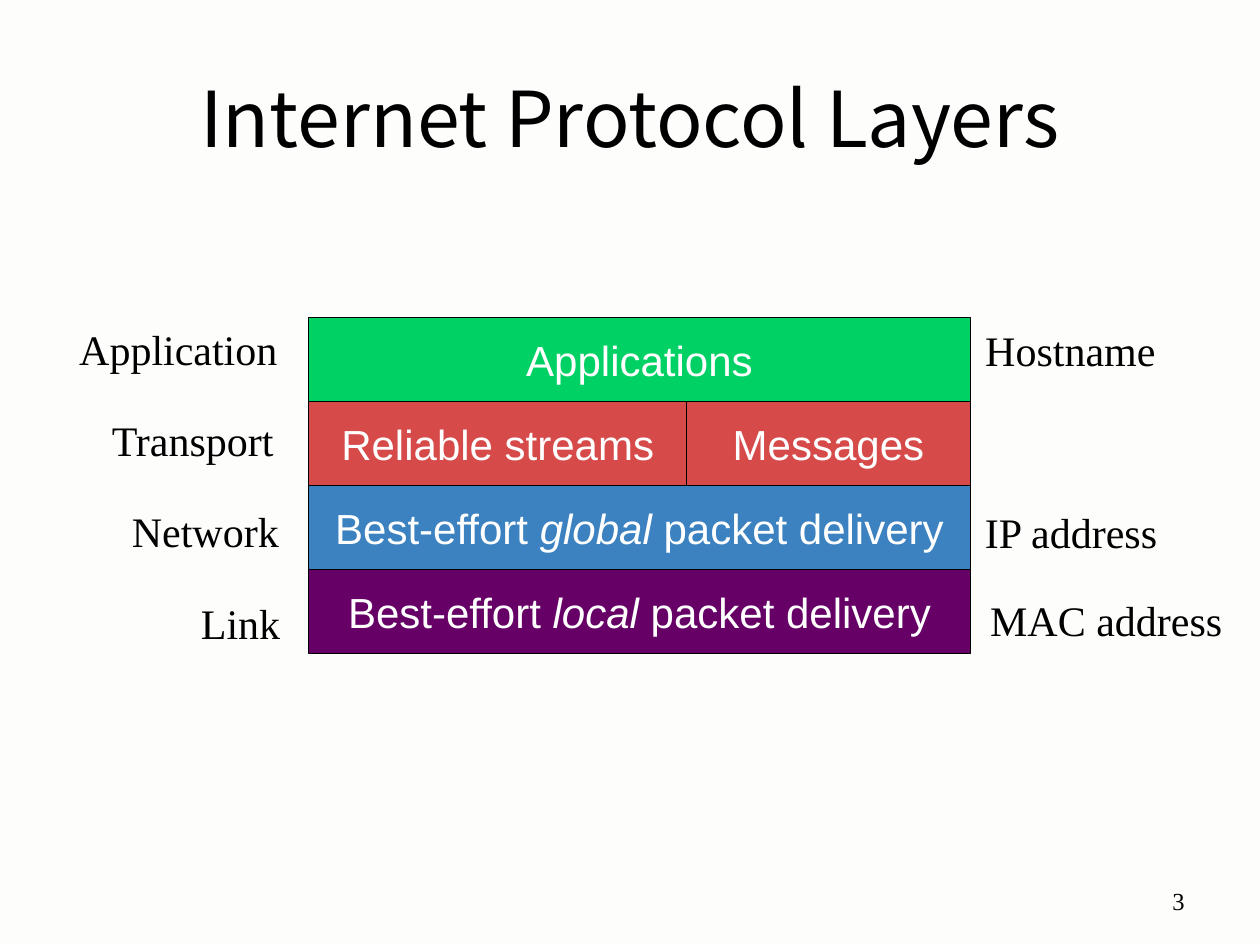
import pptx
import pptx.util
import pptx.dml.color
import pptx.enum.shapes
import pptx.enum.text

Inches = pptx.util.Inches
RGBColor = pptx.dml.color.RGBColor
Align = pptx.enum.text.PP_ALIGN
Anchor = pptx.enum.text.MSO_ANCHOR

PAPER = RGBColor(0xFD, 0xFD, 0xFC)
BLACK = RGBColor(0x00, 0x00, 0x00)
WHITE = RGBColor(0xFF, 0xFF, 0xFF)
GREEN = RGBColor(0x00, 0xD1, 0x64)
RED = RGBColor(0xD6, 0x4A, 0x49)
BLUE = RGBColor(0x3C, 0x82, 0xC0)
PURPLE = RGBColor(0x66, 0x00, 0x66)


def add_span(para, text, font, size, color, italic=False):
    span = para.add_run()
    span.text = text
    span.font.name = font
    span.font.size = pptx.util.Pt(size)
    span.font.color.rgb = color
    span.font.italic = italic


def add_label(text, left, top, width, height, size=24, align=Align.CENTER):
    box = page.shapes.add_textbox(Inches(left), Inches(top), Inches(width), Inches(height))
    box.text_frame.word_wrap = False
    para = box.text_frame.paragraphs[0]
    para.alignment = align
    add_span(para, text, "Times New Roman", size, BLACK)
    return box


deck = pptx.Presentation()
deck.slide_width = Inches(10)
deck.slide_height = Inches(7.5)
page = deck.slides.add_slide(deck.slide_layouts[5])
page.background.fill.solid()
page.background.fill.fore_color.rgb = PAPER

title = page.shapes.title
title.left, title.top = Inches(0.5), Inches(0.3)
title.width, title.height = Inches(9), Inches(1.25)
title.text_frame.vertical_anchor = Anchor.MIDDLE
title_para = title.text_frame.paragraphs[0]
title_para.alignment = Align.CENTER
add_span(title_para, "Internet Protocol Layers", "Noto Sans CJK JP", 44, BLACK)

STACK_LEFT, STACK_TOP = 2.45, 2.52
STACK_WIDTH, LAYER_HEIGHT = 5.25, 0.667
STREAMS_WIDTH = 3

layers = [
    (3, 0, STACK_WIDTH, PURPLE, ["Best-effort ", "local ", "packet delivery"]),
    (2, 0, STACK_WIDTH, BLUE, ["Best-effort ", "global ", "packet delivery"]),
    (1, 0, STREAMS_WIDTH, RED, ["Reliable streams"]),
    (0, 0, STACK_WIDTH, GREEN, ["Applications"]),
    (1, STREAMS_WIDTH, STACK_WIDTH - STREAMS_WIDTH, RED, ["Messages"]),
]
for row, offset, width, color, parts in layers:
    layer = page.shapes.add_shape(
        pptx.enum.shapes.MSO_SHAPE.RECTANGLE,
        Inches(STACK_LEFT + offset), Inches(STACK_TOP + row * LAYER_HEIGHT),
        Inches(width), Inches(LAYER_HEIGHT))
    layer.shadow.inherit = False
    layer.fill.solid()
    layer.fill.fore_color.rgb = color
    layer.line.color.rgb = BLACK
    layer.line.width = pptx.util.Pt(0.75)
    layer.text_frame.word_wrap = False
    layer.text_frame.vertical_anchor = Anchor.MIDDLE
    para = layer.text_frame.paragraphs[0]
    para.alignment = Align.CENTER
    for index, part in enumerate(parts):
        add_span(para, part, "Arial", 24, WHITE, italic=index == 1)

LABEL_RIGHT, LABEL_PITCH = 2.36, 0.723
layer_names = [("Application", 1.89), ("Transport", 1.66), ("Network", 1.46), ("Link", 0.9)]
for row, (name, width) in enumerate(layer_names):
    add_label(name, LABEL_RIGHT - width, STACK_TOP + row * LABEL_PITCH, width, 0.51)

addresses = [
    ("Hostname", 7.71, 2.53, 1.57),
    ("IP address", 7.71, 3.97, 1.58),
    ("MAC address", 7.75, 4.67, 2.06),
]
for name, left, top, width in addresses:
    add_label(name, left, top, width, 0.5)

page_number = add_label("3", 9.09, 6.95, 0.41, 0.4, size=14, align=Align.RIGHT)
page_number.text_frame.word_wrap = True
page_number.text_frame.vertical_anchor = Anchor.MIDDLE

deck.save("out.pptx")
